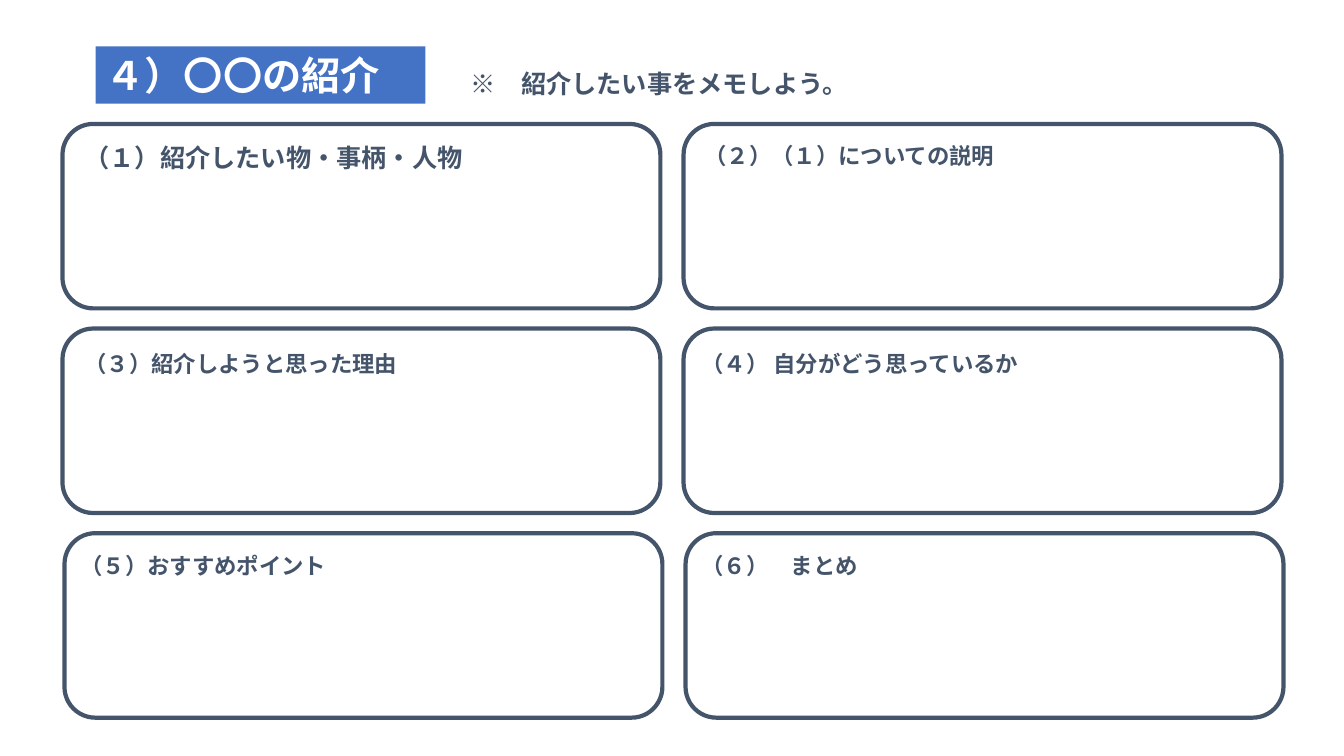
from lxml.etree import SubElement
from pptx import Presentation
from pptx.dml.color import RGBColor
from pptx.enum.shapes import MSO_SHAPE
from pptx.enum.text import MSO_ANCHOR, MSO_AUTO_SIZE, PP_ALIGN
from pptx.oxml.ns import qn
from pptx.util import Inches, Pt

FONT = "Noto Sans CJK JP"
BLUE, SLATE, WHITE = "4472C4", "44546A", "FFFFFF"

TITLE = "４）〇〇の紹介"
HINT = "※　紹介したい事をメモしよう。"
# Memo boxes row by row: heading, size, heading inset (x, y), heading width and height
MEMOS = [
    [("（１）紹介したい物・事柄・人物", 18, (0.12, 0.13), (5.56, 0.6)),
     ("（２）（１）についての説明", 16, (0.11, 0.13), (5.73, 0.54))],
    [("（３）紹介しようと思った理由", 16, (0.12, 0.16), (5.74, 0.37)),
     ("（４） 自分がどう思っているか", 16, (0.08, 0.16), (5.74, 0.37))],
    [("（５）おすすめポイント", 16, (0.06, 0.14), (4.09, 0.37)),
     ("（６）　まとめ", 16, (0.06, 0.14), (4.09, 0.37))],
]
GRID_LEFT, GRID_TOP = 0.62, 1.23
COL_STEP, ROW_STEP = 6.16, 2.03
BOX_W, BOX_H = 5.93, 1.83
ROW_SHIFT = [0, 0, 0.02]


def rgb(color):
    return RGBColor.from_string(color)


def write(sp, text, size, color=SLATE, wrap=True):
    tf = sp.text_frame
    tf.word_wrap = wrap
    tf.auto_size = MSO_AUTO_SIZE.SHAPE_TO_FIT_TEXT
    tf.vertical_anchor = MSO_ANCHOR.TOP
    p = tf.paragraphs[0]
    p.alignment = PP_ALIGN.LEFT
    r = p.add_run()
    r.text = text
    r.font.size = Pt(size)
    r.font.bold = True
    r.font.name = FONT
    r.font.color.rgb = rgb(color)
    SubElement(r.font._element, qn("a:ea"), typeface=FONT)


def add_box(shapes, kind, x, y, w, h, fill=None, line=None):
    sp = shapes.add_shape(kind, Inches(x), Inches(y), Inches(w), Inches(h))
    sp.shadow.inherit = False
    if fill:
        sp.fill.solid()
        sp.fill.fore_color.rgb = rgb(fill)
    else:
        sp.fill.background()
    if line:
        sp.line.color.rgb = rgb(line)
        sp.line.width = Pt(3)
    else:
        sp.line.fill.background()
    return sp


def add_label(shapes, text, size, x, y, w, h):
    sp = shapes.add_textbox(Inches(x), Inches(y), Inches(w), Inches(h))
    write(sp, text, size)


def main():
    prs = Presentation()
    prs.slide_width, prs.slide_height = Inches(13.33), Inches(7.5)
    slide = prs.slides.add_slide(prs.slide_layouts[6])

    banner = add_box(slide.shapes, MSO_SHAPE.RECTANGLE, 0.95, 0.46, 3.27, 0.57, fill=BLUE)
    write(banner, TITLE, 28, WHITE)

    for row, memos in enumerate(MEMOS):
        for col, (heading, size, (dx, dy), (w, h)) in enumerate(memos):
            x = GRID_LEFT + col * COL_STEP + ROW_SHIFT[row]
            y = GRID_TOP + row * ROW_STEP
            shapes = slide.shapes.add_group_shape().shapes
            add_box(shapes, MSO_SHAPE.ROUNDED_RECTANGLE, x, y, BOX_W, BOX_H, line=SLATE)
            add_label(shapes, heading, size, x + dx, y + dy, w, h)

    add_label(slide.shapes, HINT, 18, 4.57, 0.63, 6.9, 0.4)
    prs.save("out.pptx")


if __name__ == "__main__":
    main()
